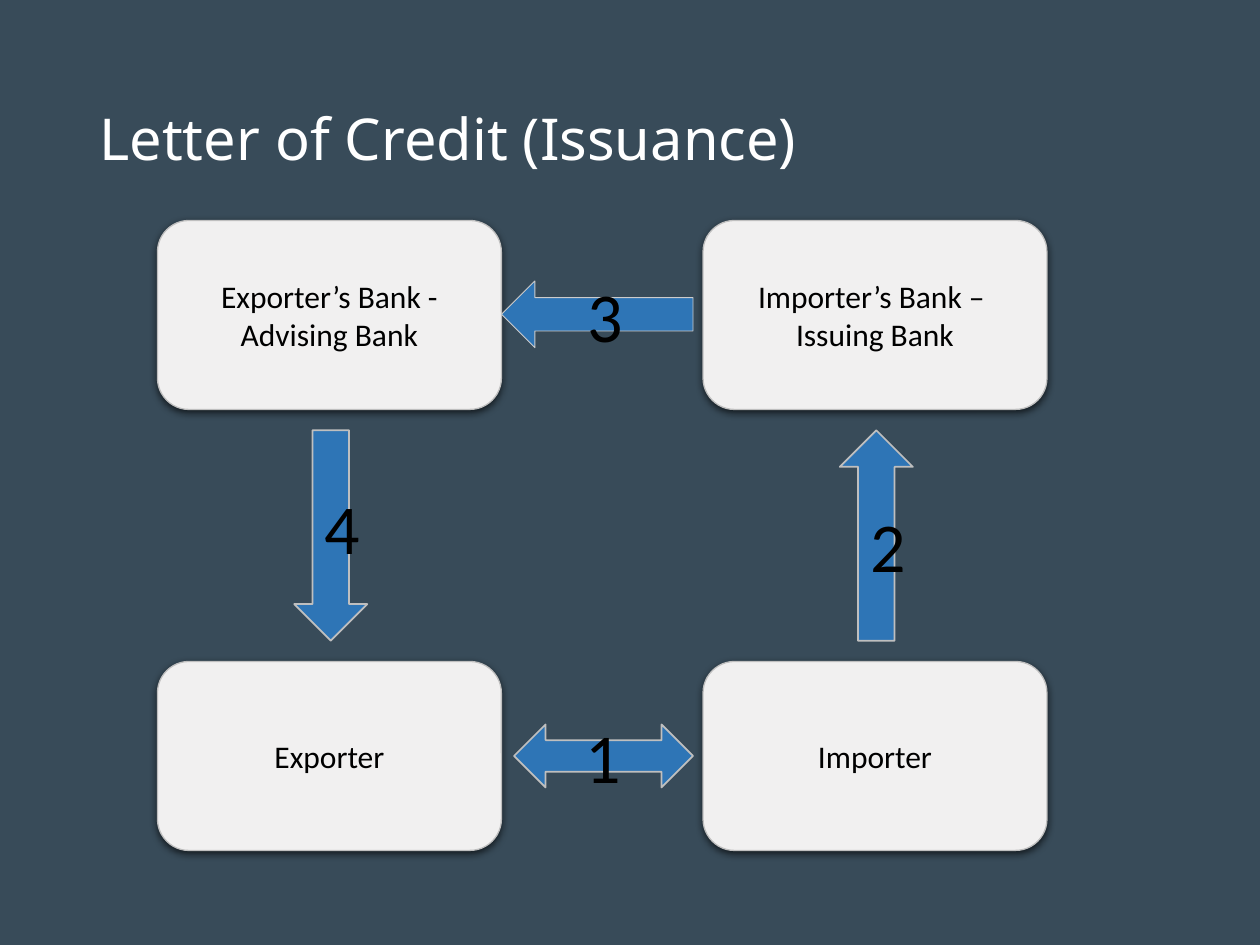
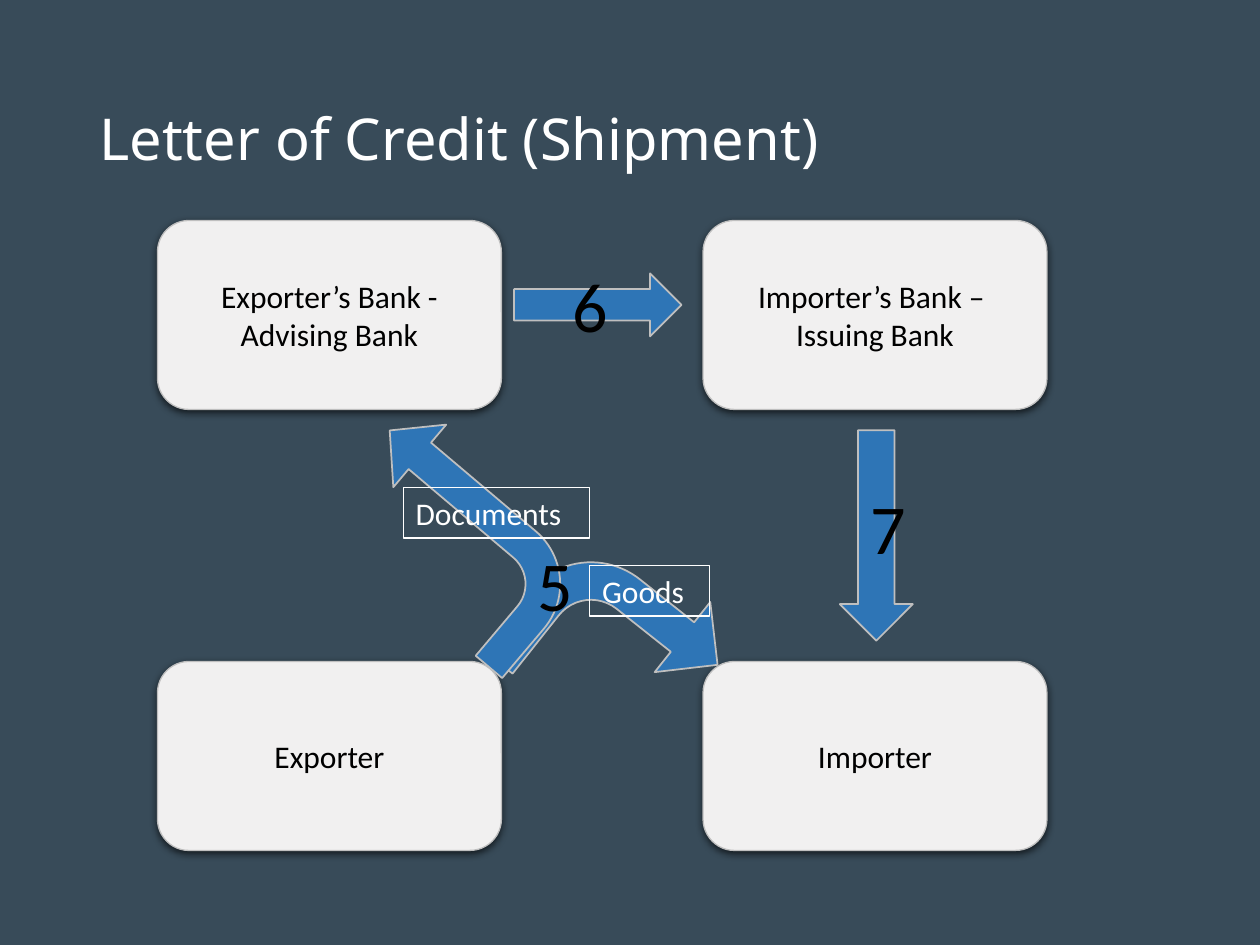
from dataclasses import dataclass

from lxml.etree import SubElement
from pptx import Presentation
from pptx.dml.color import RGBColor
from pptx.enum.shapes import MSO_SHAPE
from pptx.enum.text import MSO_ANCHOR, MSO_AUTO_SIZE, PP_ALIGN
from pptx.oxml.ns import qn
from pptx.util import Inches, Pt

HUES = {
    "back": "384B59",
    "card": "F1F0F0",
    "arrow": "2E75B6",
    "edge": "BFBFBF",
    "pale": "CCCCCC",
    "light": "FFFFFF",
    "dark": "000000",
}
BODY = "Calibri"
HEAD = "Noto Sans"
LEFT, RIGHT = 1.25, 5.58
TOP, LOW = 1.75, 5.25
WIDE, HIGH = 2.73, 1.5


@dataclass(frozen=True)
class Card:
    text: str
    left: float
    top: float


@dataclass(frozen=True)
class Arrow:
    kind: MSO_SHAPE
    box: tuple[float, float, float, float]
    text: str = ""
    turn: float = 0
    flow: str = ""
    flip: bool = False
    bends: tuple[float, ...] = ()
    edge: str = "edge"
    weight: float = 1


@dataclass(frozen=True)
class Note:
    text: str
    box: tuple[float, float, float, float]
    size: float = 18
    hue: str = "light"
    framed: bool = True


CARDS = (
    Card("Exporter’s Bank - Advising Bank", LEFT, TOP),
    Card("Exporter", LEFT, LOW),
    Card("Importer’s Bank – \vIssuing Bank", RIGHT, TOP),
    Card("Importer", RIGHT, LOW),
)


def upright(text: str, left: float, turn: float, flow: str) -> Arrow:
    long, thick = 1.67, 0.58
    box = (left + (WIDE - long) / 2 + 0.01, 4.25 - thick / 2, long, thick)
    return Arrow(MSO_SHAPE.RIGHT_ARROW, box, text, turn, flow)


ISSUE = (
    Arrow(MSO_SHAPE.LEFT_RIGHT_ARROW, (4.08, 5.75, 1.42, 0.5), "1"),
    upright("2", RIGHT, 270, "vert"),
    upright("4", LEFT, 90, "vert270"),
    Arrow(MSO_SHAPE.LEFT_ARROW, (3.98, 2.23, 1.52, 0.53), "3",
          edge="pale", weight=0.5),
)
SHIP = (
    Arrow(MSO_SHAPE.BENT_ARROW, (4.11, 4.37, 1.53, 1.42), turn=38.4,
          bends=(0.21, 0.25, 0.25, 0.44)),
    Arrow(MSO_SHAPE.BENT_ARROW, (2.67, 3.65, 1.95, 1.25), turn=40.2,
          flip=True, bends=(0.22, 0.26, 0.25, 0.44)),
    Arrow(MSO_SHAPE.RIGHT_ARROW, (4.08, 2.17, 1.33, 0.5), "6"),
    upright("7", RIGHT, 90, "vert270"),
)
NOTES = (
    Note("5", (4.17, 4.25, 0.51, 0.77), 40, "dark", False),
    Note("Documents", (3.2, 3.87, 1.48, 0.4)),
    Note("Goods", (4.68, 4.49, 0.95, 0.4)),
)


def tint(name: str) -> RGBColor:
    return RGBColor.from_string(HUES[name])


def write(shape, text: str, size: float, hue: str, face: str = BODY) -> None:
    shape.text_frame.text = text
    for part in shape.text_frame.paragraphs:
        for run in part.runs:
            run.font.size = Pt(size)
            run.font.name = face
            run.font.color.rgb = tint(hue)


def stroke(shape, hue: str, weight: float) -> None:
    shape.line.color.rgb = tint(hue)
    shape.line.width = Pt(weight)


def add_form(slide, kind: MSO_SHAPE, box: tuple, fill: str, edge: str,
             weight: float, text: str, size: float):
    shape = slide.shapes.add_shape(kind, *map(Inches, box))
    shape.shadow.inherit = False
    shape.fill.solid()
    shape.fill.fore_color.rgb = tint(fill)
    stroke(shape, edge, weight)
    if text:
        write(shape, text, size, "dark")
        shape.text_frame.word_wrap = True
        shape.text_frame.vertical_anchor = MSO_ANCHOR.MIDDLE
        shape.text_frame.paragraphs[0].alignment = PP_ALIGN.CENTER
    return shape


def add_card(slide, card: Card) -> None:
    shape = add_form(slide, MSO_SHAPE.ROUNDED_RECTANGLE,
                     (card.left, card.top, WIDE, HIGH),
                     "card", "edge", 0.75, card.text, 18)
    list_ = shape._element.spPr.find(qn("a:effectLst"))
    shade = SubElement(list_, qn("a:outerShdw"), blurRad=str(Pt(4.5)),
                       dist=str(Pt(1.5)), dir="5400000", rotWithShape="0")
    ink = SubElement(shade, qn("a:srgbClr"), val=HUES["dark"])
    SubElement(ink, qn("a:alpha"), val="63000")


def add_arrow(slide, arrow: Arrow) -> None:
    shape = add_form(slide, arrow.kind, arrow.box, "arrow", arrow.edge,
                     arrow.weight, arrow.text, 40)
    shape.rotation = arrow.turn
    for spot, bend in enumerate(arrow.bends):
        shape.adjustments[spot] = bend
    if arrow.flip:
        shape._element.spPr.find(qn("a:xfrm")).set("flipH", "1")
    if arrow.flow:
        shape.text_frame._txBody.bodyPr.set("vert", arrow.flow)


def add_note(slide, note: Note) -> None:
    shape = slide.shapes.add_textbox(*map(Inches, note.box))
    write(shape, note.text, note.size, note.hue)
    shape.text_frame.word_wrap = False
    shape.text_frame.auto_size = MSO_AUTO_SIZE.SHAPE_TO_FIT_TEXT
    if note.framed:
        stroke(shape, "light", 0.75)


def add_title(slide, text: str) -> None:
    shape = slide.shapes.add_textbox(*map(Inches, (0.69, 0.4, 8.62, 1.45)))
    write(shape, text, 33, "light", HEAD)
    shape.text_frame.word_wrap = True
    shape.text_frame.vertical_anchor = MSO_ANCHOR.MIDDLE
    shape.text_frame.paragraphs[0].line_spacing = 0.9


def add_page(deck, title: str, arrows: tuple[Arrow, ...],
             notes: tuple[Note, ...] = ()) -> None:
    slide = deck.slides.add_slide(deck.slide_layouts[6])
    slide.background.fill.solid()
    slide.background.fill.fore_color.rgb = tint("back")
    add_title(slide, title)
    for card in CARDS:
        add_card(slide, card)
    for arrow in arrows:
        add_arrow(slide, arrow)
    for note in notes:
        add_note(slide, note)


def main() -> None:
    deck = Presentation()
    deck.slide_width = Inches(10)
    deck.slide_height = Inches(7.5)
    add_page(deck, "Letter of Credit (Issuance)", ISSUE)
    add_page(deck, "Letter of Credit (Shipment)", SHIP, NOTES)
    deck.save("out.pptx")


if __name__ == "__main__":
    main()
